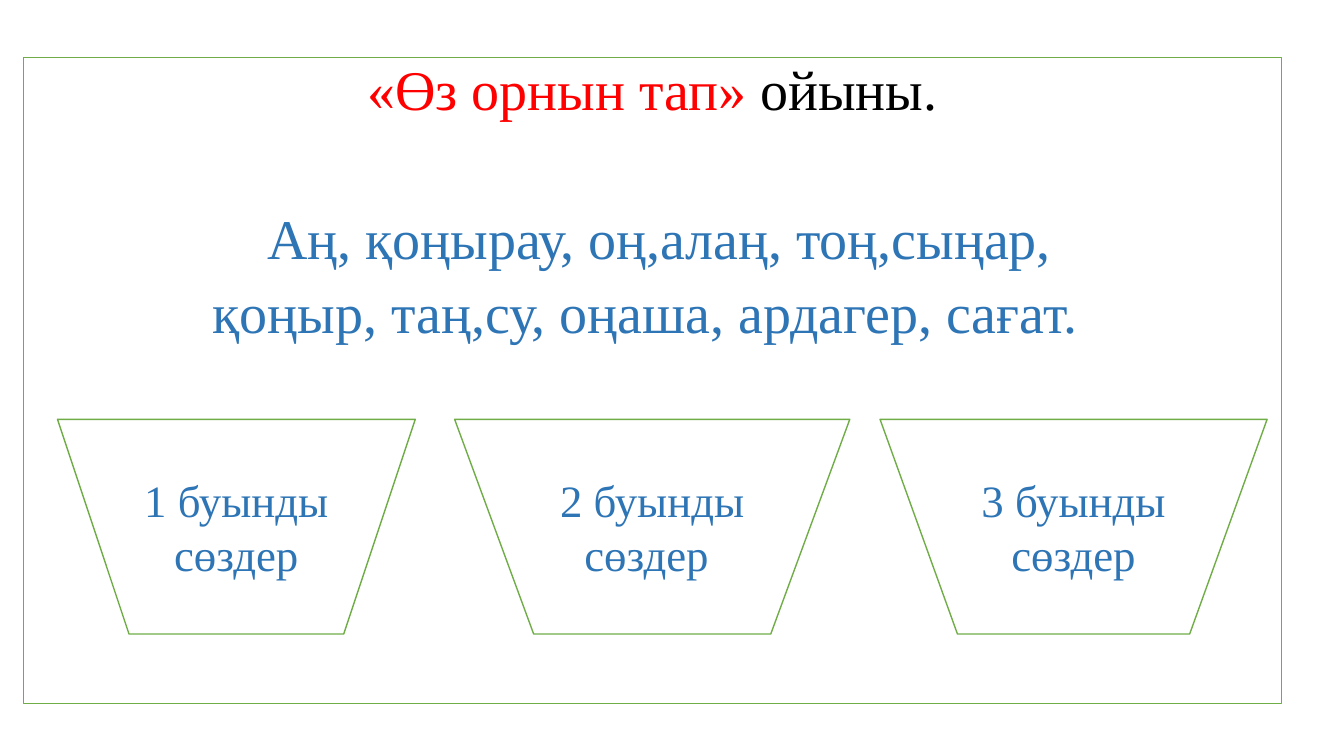
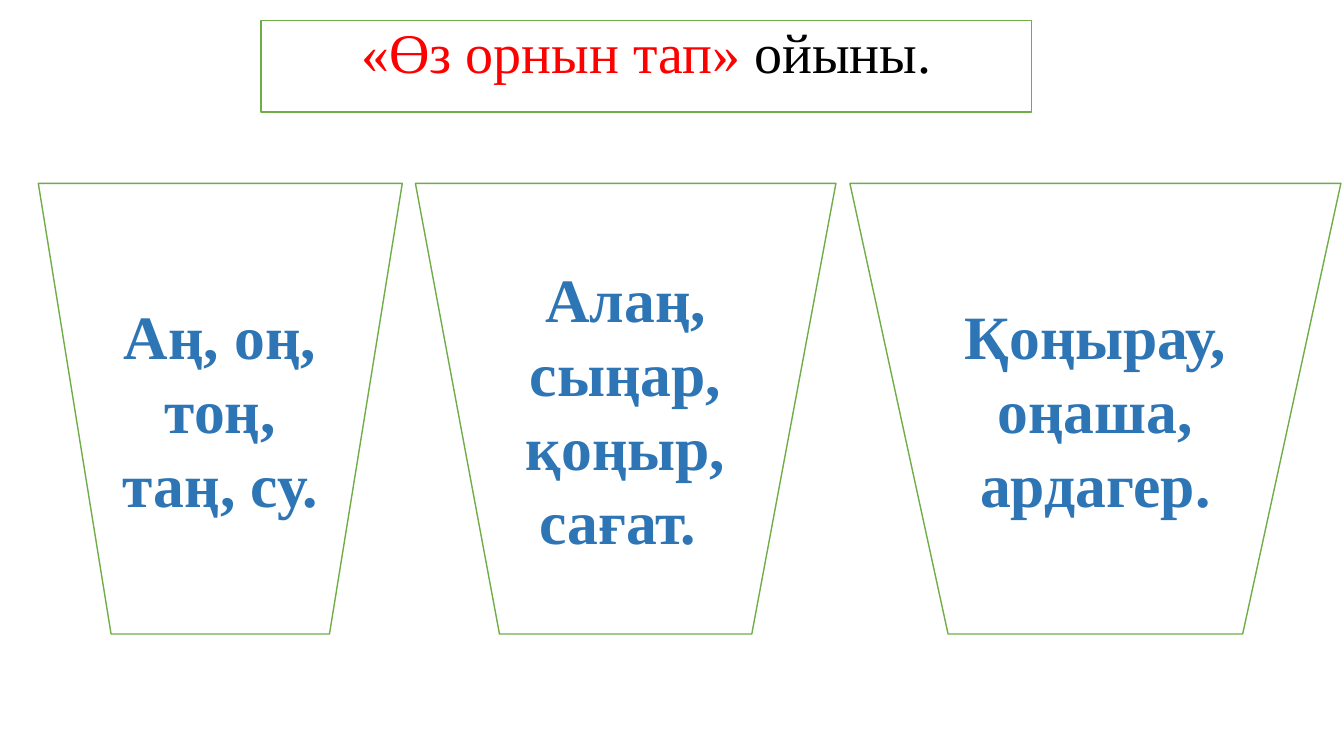
from dataclasses import dataclass

from pptx import Presentation
from pptx.dml.color import RGBColor
from pptx.enum.shapes import MSO_SHAPE
from pptx.enum.text import MSO_ANCHOR, PP_ALIGN
from pptx.util import Inches, Pt

WHITE = RGBColor(0xFF, 0xFF, 0xFF)
BLACK = RGBColor(0x00, 0x00, 0x00)
RED = RGBColor(0xFF, 0x00, 0x00)
BLUE = RGBColor(0x2E, 0x75, 0xB6)
GREEN = RGBColor(0x70, 0xAD, 0x47)
FONT = "Times New Roman"
TITLE_SIZE = 40
TITLE_SPANS = (("«Өз орнын тап» ", RED), ("ойыны.", BLACK))


@dataclass
class Box:
    left: float
    top: float
    width: float
    height: float

    def inner(self, left, top, width, height):
        """Return the inner box whose sides are percentages of this one."""
        return Box(self.left + self.width * left / 100,
                   self.top + self.height * top / 100,
                   self.width * width / 100,
                   self.height * height / 100)


SLIDE = Box(0, 0, 13.33, 7.5)


def add_outlined(page, preset, box, anchor):
    sides = [Inches(side) for side in (box.left, box.top, box.width, box.height)]
    shape = page.shapes.add_shape(preset, *sides)
    shape.shadow.inherit = False
    shape.fill.solid()
    shape.fill.fore_color.rgb = WHITE
    shape.line.color.rgb = GREEN
    shape.line.width = Pt(1)
    shape.text_frame.word_wrap = True
    shape.text_frame.vertical_anchor = anchor
    return shape


def add_span(paragraph, text, size, color, bold=False):
    span = paragraph.add_run()
    span.text = text
    span.font.name = FONT
    span.font.size = Pt(size)
    span.font.bold = bold
    span.font.color.rgb = color


def add_title_frame(page, box, word_lines=()):
    """Place the framed game title, with the words to sort below it."""
    frame = add_outlined(page, MSO_SHAPE.RECTANGLE, box, MSO_ANCHOR.TOP).text_frame
    lines = [TITLE_SPANS] + [((line, BLUE),) for line in word_lines]
    for number, spans in enumerate(lines):
        paragraph = frame.add_paragraph() if number else frame.paragraphs[0]
        paragraph.alignment = PP_ALIGN.CENTER
        paragraph.line_spacing = 0.9
        # The first line of words stands one empty line below the title.
        paragraph.space_before = Pt(63 if number == 1 else 10)
        for text, color in spans:
            add_span(paragraph, text, TITLE_SIZE, color)


def add_baskets(page, row, baskets, size, bold=False):
    """Place baskets given as (text, left, width), in percent of the row."""
    for text, left, width in baskets:
        basket = add_outlined(page, MSO_SHAPE.FLOWCHART_MANUAL_OPERATION,
                              row.inner(left, 0, width, 100), MSO_ANCHOR.MIDDLE)
        paragraph = basket.text_frame.paragraphs[0]
        paragraph.alignment = PP_ALIGN.CENTER
        add_span(paragraph, text, size, BLUE, bold)


def build_task(page):
    add_title_frame(page, SLIDE.inner(1.73, 7.6, 93.6, 85.47), (
        " Аң, қоңырау, оң,алаң, тоң,сыңар,",
        "қоңыр, таң,су, оңаша, ардагер, сағат. ",
    ))
    add_baskets(page, SLIDE.inner(4.28, 55.47, 90, 28.4), (
        ("1 буынды сөздер", 0, 29.58),
        ("2 буынды сөздер ", 32.83, 32.67),
        ("3 буынды сөздер", 68, 32),
    ), 32)


def build_answer(page):
    add_title_frame(page, SLIDE.inner(19.43, 2.67, 57.3, 12.13))
    add_baskets(page, SLIDE.inner(2.85, 24.27, 96.92, 59.6), (
        ("Аң, оң, тоң, таң, су.", 0, 27.94),
        ("Алаң, сыңар, қоңыр, сағат. ", 28.95, 32.28),
        ("Қоңырау, оңаша, ардагер.", 62.31, 37.69),
    ), 44, bold=True)


def main():
    deck = Presentation()
    deck.slide_width = Inches(SLIDE.width)
    deck.slide_height = Inches(SLIDE.height)
    for build in (build_task, build_answer):
        build(deck.slides.add_slide(deck.slide_layouts[6]))
    deck.save("out.pptx")


if __name__ == "__main__":
    main()
